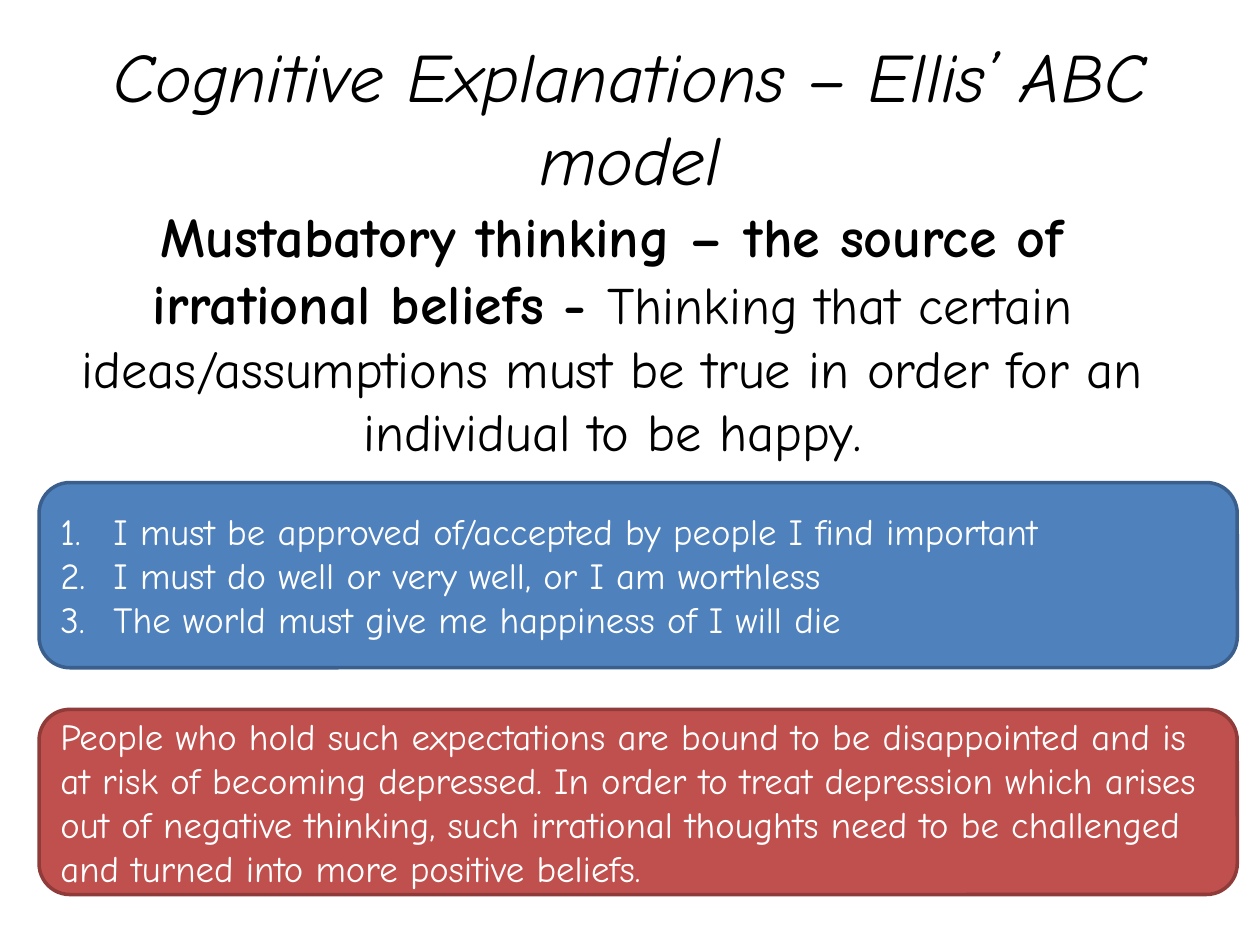
"""Build a slide on Ellis' ABC model and the source of irrational beliefs."""
import pptx
import pptx.dml.color
import pptx.enum.shapes
import pptx.enum.text
import pptx.util
from lxml import etree
from pptx.oxml.ns import qn

Inches = pptx.util.Inches
Pt = pptx.util.Pt
ALIGN = pptx.enum.text.PP_ALIGN
ANCHOR = pptx.enum.text.MSO_ANCHOR

FONT = "Comic Neue"
COLOURS = {
    "text": "000000", "panel_text": "FFFFFF",
    "blue": "4F81BD", "blue_edge": "3A5F8C",
    "red": "C0504D", "red_edge": "8E3B39",
}
TITLE = "Cognitive Explanations – Ellis’ ABC model"
DEFINITION = [
    ("Mustabatory thinking – the source of irrational beliefs - ", 32, True),
    ("Thinking that certain ideas/assumptions must be true in order for an "
     "individual to be happy.", 30, False),
]
PANELS = [
    {"fill": "blue", "top": 3.83, "numbered": True, "lines": [
        "I must be approved of/accepted by people I find important",
        "I must do well or very well, or I am worthless",
        "The world must give me happiness of I will die",
    ]},
    {"fill": "red", "top": 5.63, "numbered": False, "lines": [
        "People who hold such expectations are bound to be disappointed and is "
        "at risk of becoming depressed. In order to treat depression which "
        "arises out of negative thinking, such irrational thoughts need to be "
        "challenged and turned into more positive beliefs.",
    ]},
]


def colour(name):
    return pptx.dml.color.RGBColor.from_string(COLOURS[name])


def style(font, size, colour_name="text"):
    font.name = FONT
    font.size = Pt(size)
    font.color.rgb = colour(colour_name)


def add_text_box(page, left, top, width, height, anchor):
    box = page.shapes.add_textbox(*map(Inches, (left, top, width, height)))
    box.text_frame.word_wrap = True
    box.text_frame.vertical_anchor = anchor
    para = box.text_frame.paragraphs[0]
    para.alignment = ALIGN.CENTER
    return para


def number(para):
    properties = para._p.get_or_add_pPr()
    properties.set("marL", str(Inches(0.42)))
    properties.set("indent", str(-Inches(0.42)))
    etree.SubElement(properties, qn("a:buFont"), typeface="+mj-lt")
    etree.SubElement(properties, qn("a:buAutoNum"), type="arabicPeriod")


def add_panel(page, panel):
    box = page.shapes.add_shape(
        pptx.enum.shapes.MSO_SHAPE.ROUNDED_RECTANGLE,
        Inches(0.31), Inches(panel["top"]), Inches(9.51), Inches(1.47))
    box.shadow.inherit = False
    box.fill.solid()
    box.fill.fore_color.rgb = colour(panel["fill"])
    box.line.color.rgb = colour(panel["fill"] + "_edge")
    box.line.width = Pt(2)
    frame = box.text_frame
    frame.word_wrap = True
    frame.vertical_anchor = ANCHOR.MIDDLE
    frame.text = "\n".join(panel["lines"])
    for para in frame.paragraphs:
        para.alignment = ALIGN.LEFT
        if panel["numbered"]:
            number(para)
        style(para.font, 21, "panel_text")


def main():
    deck = pptx.Presentation()
    deck.slide_width, deck.slide_height = Inches(10), Inches(7.5)
    page = deck.slides.add_slide(deck.slide_layouts[6])

    title = add_text_box(page, 0.5, 0.3, 9, 1.25, ANCHOR.MIDDLE)
    title.text = TITLE
    style(title.font, 39.6)
    title.font.italic = True

    definition = add_text_box(page, 0.55, 1.55, 8.62, 3.57, ANCHOR.TOP)
    for text, size, bold in DEFINITION:
        span = definition.add_run()
        span.text = text
        style(span.font, size)
        span.font.bold = bold

    for panel in PANELS:
        add_panel(page, panel)
    deck.save("out.pptx")


if __name__ == "__main__":
    main()
